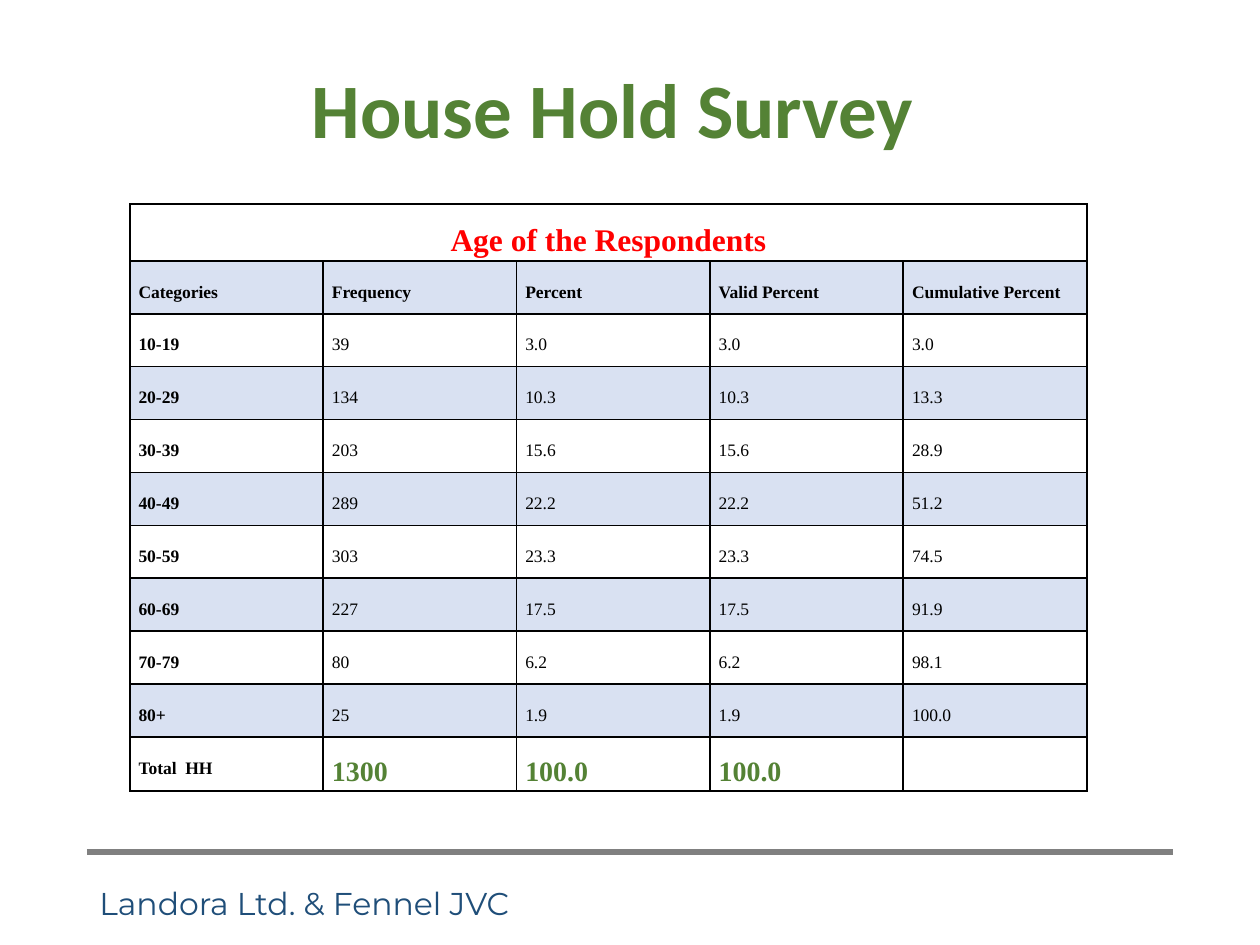
from lxml.etree import SubElement
from pptx import Presentation
from pptx.dml.color import RGBColor
from pptx.enum.shapes import MSO_CONNECTOR
from pptx.enum.text import MSO_ANCHOR, PP_ALIGN
from pptx.oxml.ns import qn
from pptx.util import Inches, Pt

# Grid: 100 columns by 75 rows on a 10 x 7.5 inch slide
COLS, ROWS = 100, 75
GREEN, RED, BLACK = "548235", "FF0000", "000000"
NAVY, GREY, BAND = "1F4E79", "808080", "D9E1F2"


def color(code):
    return RGBColor.from_string(code)


def apply(target, values):
    for name, value in values.items():
        setattr(target, name, value)


class Deck:
    body = {"name": "Times New Roman", "size": Pt(10), "bold": False}
    inset = {"margin_left": Inches(0.07), "margin_right": Inches(0.07),
             "margin_top": 0, "margin_bottom": 0,
             "vertical_anchor": MSO_ANCHOR.MIDDLE}

    def __init__(self):
        self.prs = Presentation()
        apply(self.prs, {"slide_width": Inches(10), "slide_height": Inches(7.5)})
        self.slide = self.prs.slides.add_slide(self.prs.slide_layouts[5])

    def x(self, col):
        return round(self.prs.slide_width * col / COLS)

    def y(self, row):
        return round(self.prs.slide_height * row / ROWS)

    def box(self, left, top, width, height):
        return self.x(left), self.y(top), self.x(width), self.y(height)

    def text(self, frame, words, font, code, **para):
        line = frame.paragraphs[0]
        apply(line, para)
        run = line.add_run()
        run.text = words
        apply(run.font, font)
        run.font.color.rgb = color(code)

    def title(self, words, place, font, code):
        shape = self.slide.shapes.title
        apply(shape, dict(zip(("left", "top", "width", "height"), self.box(*place))))
        apply(shape.text_frame, {"word_wrap": True, "vertical_anchor": MSO_ANCHOR.MIDDLE})
        self.text(shape.text_frame, words, font, code,
                  alignment=PP_ALIGN.CENTER, line_spacing=0.9)

    def label(self, words, place, font, code):
        frame = self.slide.shapes.add_textbox(*self.box(*place)).text_frame
        apply(frame, {"word_wrap": True, "vertical_anchor": MSO_ANCHOR.MIDDLE})
        self.text(frame, words, font, code)

    def rule(self, left, right, row, width, code):
        line = self.slide.shapes.add_connector(
            MSO_CONNECTOR.STRAIGHT, self.x(left), self.y(row), self.x(right), self.y(row))
        line.line.width = Pt(width)
        line.line.color.rgb = color(code)
        SubElement(line._element.spPr, qn("a:effectLst"))

    def border(self, cell, code, width):
        props = cell._tc.get_or_add_tcPr()
        for side in ("lnL", "lnR", "lnT", "lnB"):
            edge = SubElement(props, qn(f"a:{side}"), w=str(Pt(width)))
            fill = SubElement(edge, qn("a:solidFill"))
            SubElement(fill, qn("a:srgbClr"), val=code)

    def table(self, left, top, widths, heights):
        place = self.box(left, top, sum(widths), sum(heights))
        table = self.slide.shapes.add_table(len(heights), len(widths), *place).table
        apply(table, {"first_row": False, "horz_banding": False})
        for col, width in zip(table.columns, widths):
            col.width = self.x(width)
        for row, height in zip(table.rows, heights):
            row.height = self.y(height)
        for num, row in enumerate(table.rows):
            for cell in row.cells:
                apply(cell, self.inset)
                self.border(cell, BLACK, 1)
                if num % 2:
                    cell.fill.solid()
                    cell.fill.fore_color.rgb = color(BAND)
                else:
                    cell.fill.background()
        return table

    def cell(self, cell, words, code=BLACK, align=PP_ALIGN.JUSTIFY, **font):
        self.text(cell.text_frame, words, {**self.body, **font}, code,
                  alignment=align, line_spacing=1.5)


HEAD = ["Categories", "Frequency", "Percent", "Valid Percent", "Cumulative Percent"]
AGES = [
    ("10-19", "39", "3.0", "3.0"),
    ("20-29", "134", "10.3", "13.3"),
    ("30-39", "203", "15.6", "28.9"),
    ("40-49", "289", "22.2", "51.2"),
    ("50-59", "303", "23.3", "74.5"),
    ("60-69", "227", "17.5", "91.9"),
    ("70-79", "80", "6.2", "98.1"),
    ("80+", "25", "1.9", "100.0"),
]
TOTAL = ["Total  HH", "1300", "100.0", "100.0"]


def main():
    deck = Deck()

    # Footer
    deck.rule(6.9, 93.1, 67.6, 3.25, GREY)
    deck.label("Landora Ltd. & Fennel JVC", (6.9, 69, 53.9, 5.3),
               {"name": "Montserrat", "size": Pt(18)}, NAVY)

    # Title
    deck.title("House Hold Survey", (23.1, 4.5, 51.1, 9.1),
               {"name": "Calibri", "size": Pt(44), "bold": True}, GREEN)

    # Table heading across all columns
    grid = deck.table(10.3, 16.2, [15.35] * 4 + [14.6], [3.7] + [4.2] * 9 + [4.3])
    grid.cell(0, 0).merge(grid.cell(0, 4))
    deck.cell(grid.cell(0, 0), "Age of the Respondents", RED, PP_ALIGN.CENTER,
              size=Pt(18), bold=True)

    # Header and age groups; valid percent equals percent
    rows = [HEAD] + [(age, count, share, share, total) for age, count, share, total in AGES]
    for row, texts in enumerate(rows, 1):
        for col, words in enumerate(texts):
            deck.cell(grid.cell(row, col), words, bold=row == 1 or col == 0)

    # Totals
    last = len(rows) + 1
    deck.cell(grid.cell(last, 0), TOTAL[0], bold=True)
    for col, words in enumerate(TOTAL[1:], 1):
        deck.cell(grid.cell(last, col), words, GREEN, size=Pt(16), bold=True)

    deck.prs.save("out.pptx")


if __name__ == "__main__":
    main()
